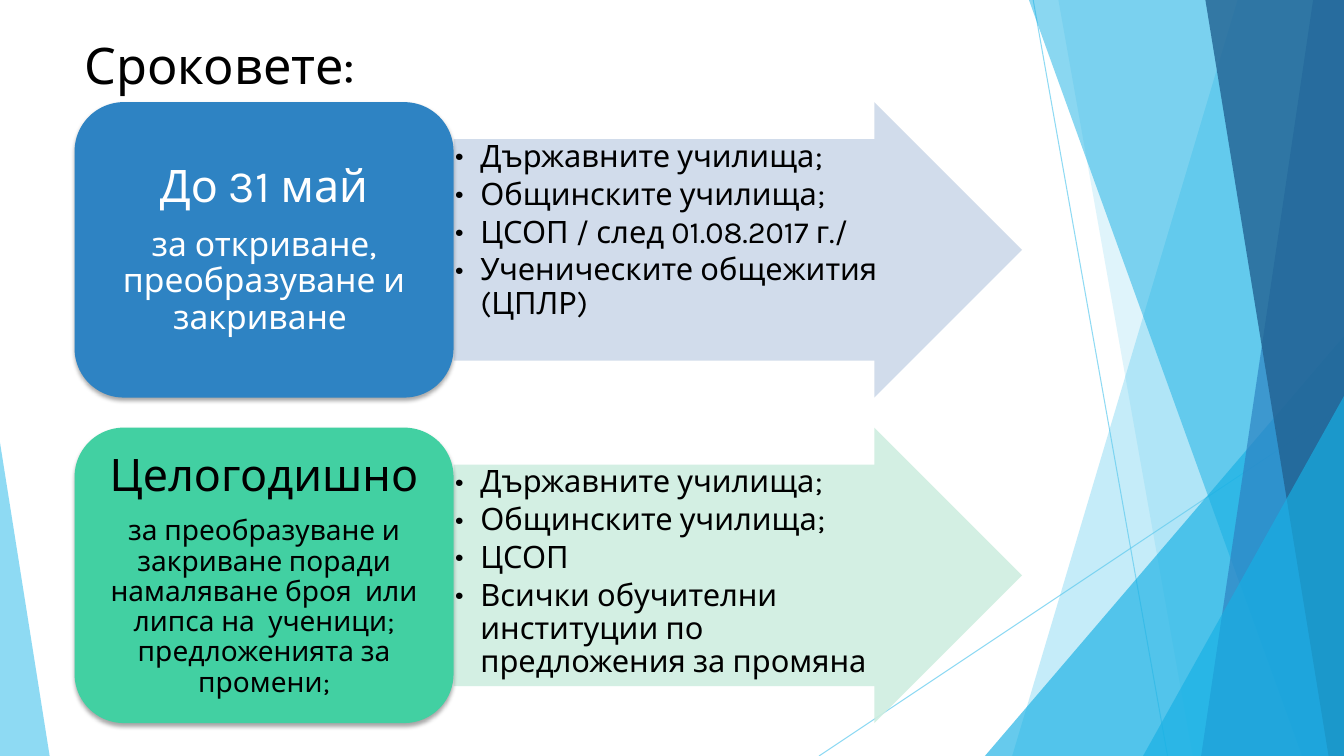
"""Build a slide of two deadlines, each a rounded card with an arrow listing institutions."""
import pptx
import pptx.dml.color
import pptx.enum.shapes
import pptx.enum.text
import pptx.oxml
import pptx.oxml.ns
import pptx.util

Pt = pptx.util.Pt
RGB = pptx.dml.color.RGBColor
SHAPE = pptx.enum.shapes.MSO_SHAPE
ALIGN = pptx.enum.text.PP_ALIGN
ANCHOR = pptx.enum.text.MSO_ANCHOR
qn = pptx.oxml.ns.qn
NS = pptx.oxml.ns.nsdecls("a")

BLACK = RGB(0x00, 0x00, 0x00)
WHITE = RGB(0xFF, 0xFF, 0xFF)
SKY = RGB(0x5F, 0xCB, 0xEF)
CYAN = RGB(0x17, 0xB0, 0xE4)
BLUE = RGB(0x2E, 0x83, 0xC3)
NAVY = RGB(0x22, 0x62, 0x92)
GREEN = RGB(0x42, 0xD0, 0xA2)
PALE_BLUE = RGB(0xCD, 0xD9, 0xE9)
PALE_GREEN = RGB(0xCF, 0xEE, 0xE0)

WIDTH, HEIGHT = 960, 540
LEFT, TOP = 53.28, 73
CARD_W, ARROW_W, LIST_W = 270.72, 406.08, 326.88
ROW_H, ROW_STEP = 211, 232.5

DEADLINES = [
    (BLUE, WHITE, PALE_BLUE, "До 31 май",
     "за откриване, преобразуване и закриване ", 24,
     ["Държавните училища;", "Общинските училища;",
      "ЦСОП / след 01.08.2017 г./", "Ученическите общежития (ЦПЛР)"]),
    (GREEN, BLACK, PALE_GREEN, "Целогодишно",
     "за преобразуване и закриване поради намаляване броя  или липса на  ученици; "
     "предложенията за промени;", 20,
     ["Държавните училища;", "Общинските училища;", "ЦСОП",
      "Всички обучителни институции по предложения за промяна"]),
]


def add_text(tf, text, size=22, color=BLACK, align=ALIGN.LEFT, spacing=1.0, after=0, bullet=False):
    """Write one formatted paragraph, using the empty first one if it is free."""
    p = tf.paragraphs[0] if not tf.text else tf.add_paragraph()
    p.alignment, p.line_spacing, p.space_after = align, spacing, Pt(after)
    if bullet:
        pPr = p._p.get_or_add_pPr()
        pPr.set("marL", str(Pt(18)))
        pPr.set("indent", str(-Pt(18)))
        pPr.append(pptx.oxml.parse_xml(f'<a:buFont {NS} typeface="Karla"/>'))
        pPr.append(pptx.oxml.parse_xml(f'<a:buChar {NS} char="•"/>'))
    r = p.add_run()
    r.text = text
    r.font.name, r.font.size, r.font.color.rgb = "Karla", Pt(size), color


class Deck:
    """Hold the current slide and draw its kinds of element."""

    def __init__(self, prs):
        """Add a blank slide to the presentation."""
        self.shapes = prs.slides.add_slide(prs.slide_layouts[6]).shapes

    def fade(self, s, percent):
        """Set the opacity of the colour of a shape or line."""
        color = s._element.spPr.find(".//" + qn("a:srgbClr"))
        color.append(pptx.oxml.parse_xml(f'<a:alpha {NS} val="{percent * 1000}"/>'))

    def paint(self, s, color, percent=100):
        """Fill a shape flat, with no outline or shadow."""
        s.shadow.inherit = False
        s.fill.solid()
        s.fill.fore_color.rgb = color
        s.line.fill.background()
        if percent < 100:
            self.fade(s, percent)

    def line(self, x1, y1, x2, y2):
        """Draw a thin translucent line."""
        s = self.shapes.add_connector(
            pptx.enum.shapes.MSO_CONNECTOR.STRAIGHT, Pt(x1), Pt(y1), Pt(x2), Pt(y2))
        s.line.color.rgb, s.line.width = SKY, Pt(0.75)
        self.fade(s, 70)
        s._element.spPr.append(pptx.oxml.parse_xml(f'<a:effectLst {NS}/>'))

    def ribbon(self, top_x, bottom_x, color, percent):
        """Fill from a slanted edge to the right side of the slide."""
        fb = self.shapes.build_freeform(top_x, 0, scale=Pt(1))
        fb.add_line_segments([(WIDTH, 0), (WIDTH, HEIGHT), (bottom_x, HEIGHT)], close=True)
        self.paint(fb.convert_to_shape(), color, percent)

    def shape(self, kind, x, y, w, h, color, percent=100, adjust=()):
        """Draw a preset shape with a flat fill."""
        s = self.shapes.add_shape(kind, Pt(x), Pt(y), Pt(w), Pt(h))
        for i, value in enumerate(adjust):
            s.adjustments[i] = value
        self.paint(s, color, percent)
        return s

    def corner(self, x, y, w, apex, color, percent):
        """Draw a right triangle standing on the bottom edge."""
        self.shape(SHAPE.ISOSCELES_TRIANGLE, x, y, w, HEIGHT - y, color, percent, [apex])

    def frame(self, s, anchor, side, edge):
        """Return the wrapped text frame of a shape with the given insets."""
        tf = s.text_frame
        tf.word_wrap, tf.vertical_anchor = True, anchor
        tf.margin_left = tf.margin_right = Pt(side)
        tf.margin_top = tf.margin_bottom = Pt(edge)
        return tf

    def textbox(self, x, y, w, h, anchor, side, edge):
        """Add a text box and return its text frame."""
        s = self.shapes.add_textbox(Pt(x), Pt(y), Pt(w), Pt(h))
        return self.frame(s, anchor, side, edge)

    def title(self, text):
        """Write the slide title."""
        tf = self.textbox(LEFT, 19.5, 676.8, 52.56, ANCHOR.MIDDLE, 7.2, 3.6)
        add_text(tf, text, size=36)

    def arrow(self, y, color, items):
        """Draw an arrow with a bulleted list over its shaft."""
        x = LEFT + CARD_W
        self.shape(SHAPE.RIGHT_ARROW, x, y, ARROW_W, ROW_H, color, 90, [0.75, 0.5])
        tf = self.textbox(x, y + ROW_H / 8, LIST_W, ROW_H * 0.75, ANCHOR.TOP, 1.2, 1.2)
        for item in items:
            add_text(tf, item, spacing=0.9, after=3.3, bullet=True)

    def card(self, y, color, ink, heading, detail, size):
        """Draw a shadowed card with a heading and a detail."""
        s = self.shape(SHAPE.ROUNDED_RECTANGLE, LEFT, y, CARD_W, ROW_H, color)
        s._element.spPr.find(qn("a:effectLst")).append(pptx.oxml.parse_xml(
            f'<a:outerShdw {NS} blurRad="{Pt(3)}" dist="{Pt(2)}" '
            'dir="5400000" rotWithShape="0"><a:srgbClr val="000000">'
            '<a:alpha val="35000"/></a:srgbClr></a:outerShdw>'))
        tf = self.frame(s, ANCHOR.MIDDLE, 9.6, 4.8)
        for text, points in ((heading, 32), (detail, size)):
            add_text(tf, text, size=points, color=ink, align=ALIGN.CENTER,
                     spacing=0.9, after=0.35 * points)


def main():
    """Build and save the slide."""
    prs = pptx.Presentation()
    prs.slide_width, prs.slide_height = Pt(WIDTH), Pt(HEIGHT)
    deck = Deck(prs)
    deck.line(738, 0, 834, HEIGHT)
    deck.line(WIDTH, 290, 585, HEIGHT)
    deck.ribbon(884, 723, SKY, 36)
    deck.ribbon(756, 852, SKY, 20)
    deck.corner(703.5, 240, 256.5, 1, CYAN, 66)
    deck.ribbon(735, 929.5, CYAN, 50)
    deck.ribbon(938, 858, BLUE, 70)
    deck.ribbon(861, 949, NAVY, 80)
    deck.corner(816.5, 283, 143.5, 1, CYAN, 66)
    deck.corner(0, 316, 35.5, 0, SKY, 70)
    deck.title("Сроковете:")
    for i, (color, ink, pale, heading, detail, size, items) in enumerate(DEADLINES):
        y = TOP + i * ROW_STEP
        deck.arrow(y, pale, items)
        deck.card(y, color, ink, heading, detail, size)
    prs.save("out.pptx")


if __name__ == "__main__":
    main()
